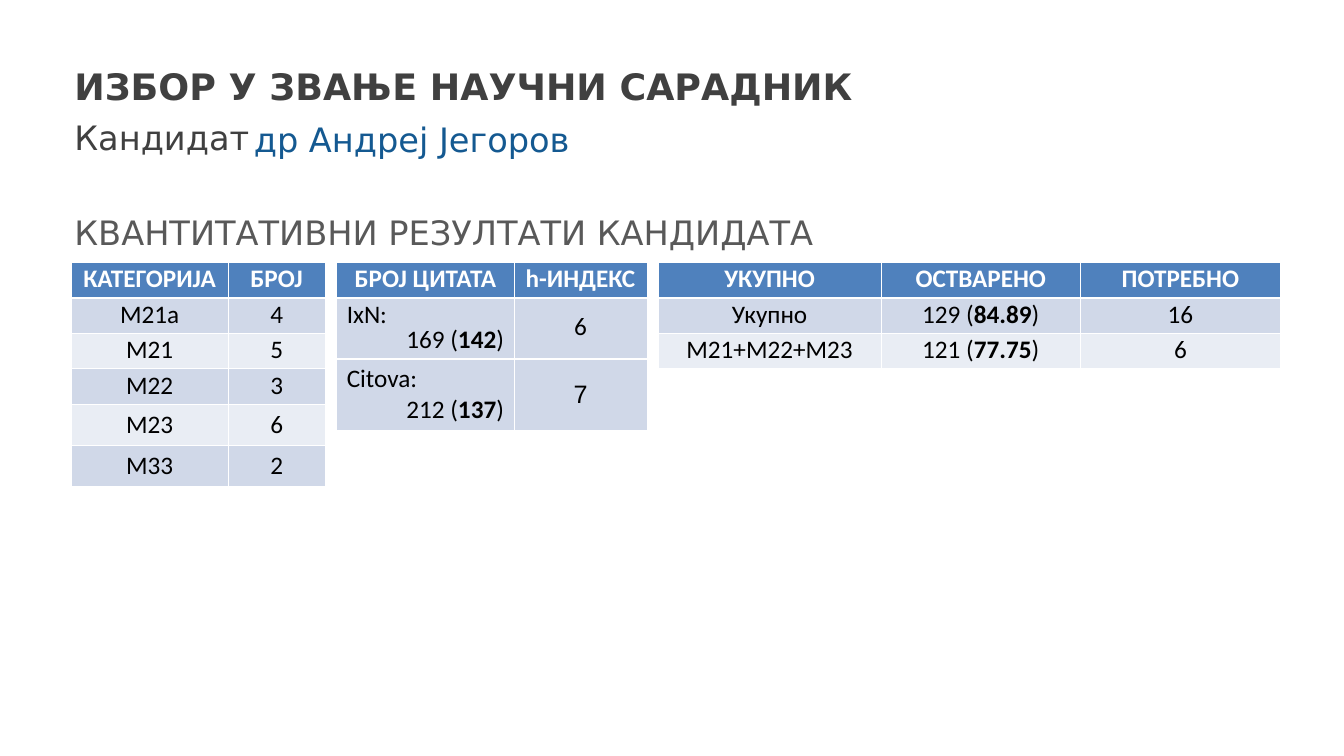
from pptx import Presentation
from pptx.dml.color import RGBColor
from pptx.enum.text import MSO_ANCHOR as Anchor, PP_ALIGN as Align
from pptx.oxml import parse_xml
from pptx.oxml.ns import nsdecls
from pptx.util import Pt

HEADER, BAND, LIGHT_BAND = "4F81BD", "D0D8E8", "E9EDF4"
THIN, THICK = 0.45, 1.47
TIGHT, SINGLE = 0.83, 1.0
TIGHT_ROW, SINGLE_ROW = 25.4, 29.2
TABLE_TOP = 187.2

HEADINGS = [
    ("ИЗБОР У ЗВАЊЕ НАУЧНИ САРАДНИК", (46.1, 38.9, 868.3, 41.8), Anchor.BOTTOM,
     {"size": 26, "color": "404040", "bold": True}, SINGLE),
    ("Кандидат", (46.1, 79.9, 868.3, 36), Anchor.TOP,
     {"size": 24, "color": "404040"}, SINGLE),
    ("др Андреј Јегоров", (174.2, 80.6, 486, 34.6), Anchor.MIDDLE,
     {"size": 24, "color": "145991"}, 1.1),
    ("КВАНТИТАТИВНИ РЕЗУЛТАТИ КАНДИДАТА", (46.1, 141.8, 868.3, 41.8), Anchor.BOTTOM,
     {"size": 24, "color": "595959"}, SINGLE),
]

TOTALS = [
    ["УКУПНО", "ОСТВАРЕНО", "ПОТРЕБНО"],
    ["Укупно", "129 (*84.89*)", "16"],
    ["М21+М22+М23", "121 (*77.75*)", "6"],
]
CATEGORIES = [
    ["КАТЕГОРИЈА", "БРОЈ"],
    ["М21а", "4"],
    ["М21", "5"],
    ["М22", "3"],
    ["М23", "6"],
    ["М33", "2"],
]
CITATIONS = [
    ["БРОЈ ЦИТАТА", "h-ИНДЕКС"],
    ["IxN:\n169 (*142*)", "6"],
    ["Citova:\n212 (*137*)", "7"],
]


def rgb(value):
    """Turn a hex string into a colour."""
    return RGBColor.from_string(value)


def style_font(font, look):
    """Apply a dict of format values to a font."""
    values = dict(look)
    font.color.rgb = rgb(values.pop("color"))
    values["size"] = Pt(values["size"])
    for key, value in values.items():
        setattr(font, key, value)


def write_paragraph(paragraph, text, look, spacing, align=Align.LEFT):
    """Write text in one paragraph, with bold between asterisks."""
    paragraph.alignment, paragraph.line_spacing = align, spacing
    for index, part in enumerate(text.split("*")):
        if part:
            run = paragraph.add_run()
            run.text = part
            style_font(run.font, look | ({"bold": True} if index % 2 else {}))


def add_heading(slide, text, place, anchor, look, spacing):
    """Add one line of heading text."""
    frame = slide.shapes.add_textbox(*map(Pt, place)).text_frame
    frame.word_wrap, frame.vertical_anchor = True, anchor
    write_paragraph(frame.paragraphs[0], text, {"name": "DejaVu Sans"} | look, spacing)


def add_borders(cell, top, bottom):
    """Draw white borders around a cell, ahead of its fill."""
    widths = {"lnL": THIN, "lnR": THIN, "lnT": top, "lnB": bottom}
    for position, (side, width) in enumerate(widths.items()):
        border = parse_xml(
            f'<a:{side} {nsdecls("a")} w="{Pt(width)}"><a:solidFill>'
            f'<a:srgbClr val="FFFFFF"/></a:solidFill></a:{side}>')
        cell._tc.get_or_add_tcPr().insert(position, border)


def fill_cell(cell, text, look, fill, spacing, anchor):
    """Fill a cell; a label above a value goes left and the value right."""
    cell.fill.solid()
    cell.fill.fore_color.rgb = rgb(fill)
    cell.vertical_anchor = anchor
    lines = text.split("\n")
    aligns = [Align.CENTER] if len(lines) == 1 else [Align.LEFT, Align.RIGHT]
    frame = cell.text_frame
    for index, (line, align) in enumerate(zip(lines, aligns)):
        paragraph = frame.add_paragraph() if index else frame.paragraphs[0]
        write_paragraph(paragraph, line, look, spacing, align)


def add_results(slide, left, widths, heights, rows, tight_rows, bands,
                anchor=Anchor.MIDDLE, ruled=False):
    """Add a results table with a header and banded rows."""
    table = slide.shapes.add_table(
        len(rows), len(widths), Pt(left), Pt(TABLE_TOP),
        Pt(sum(widths)), Pt(sum(heights))).table
    for column, width in zip(table.columns, widths):
        column.width = Pt(width)
    for number, (labels, height) in enumerate(zip(rows, heights)):
        table.rows[number].height = Pt(height)
        header = number == 0
        look = {"name": "Calibri", "size": 18, "bold": header,
                "color": "FFFFFF" if header else "000000"}
        fill = HEADER if header else bands[(number - 1) % len(bands)]
        spacing = TIGHT if number < tight_rows else SINGLE
        top = THICK if number == 1 or (ruled and number) else THIN
        bottom = THICK if header or (ruled and number + 1 < len(rows)) else THIN
        for column, label in enumerate(labels):
            cell = table.cell(number, column)
            fill_cell(cell, label, look, fill, spacing, anchor)
            add_borders(cell, top, bottom)
    return table


def main():
    """Build the slide and save it."""
    deck = Presentation()
    deck.slide_width, deck.slide_height = Pt(960), Pt(540)
    slide = deck.slides.add_slide(deck.slide_layouts[6])
    for heading in HEADINGS:
        add_heading(slide, *heading)
    bands = [BAND, LIGHT_BAND]
    add_results(slide, 470.2, [159.1, 142.6, 142.6], [TIGHT_ROW] * 3,
                TOTALS, 3, bands, Anchor.TOP)
    add_results(slide, 51.1, [111.6, 69.8], [TIGHT_ROW] * 4 + [SINGLE_ROW] * 2,
                CATEGORIES, 4, bands)
    citations = add_results(slide, 240.5, [126.7, 95], [TIGHT_ROW, 43.6, 51.2],
                            CITATIONS, 2, [BAND], ruled=True)
    citations.cell(2, 1).text_frame.paragraphs[0].runs[0].font.name = "Arial"
    deck.save("out.pptx")


if __name__ == "__main__":
    main()
